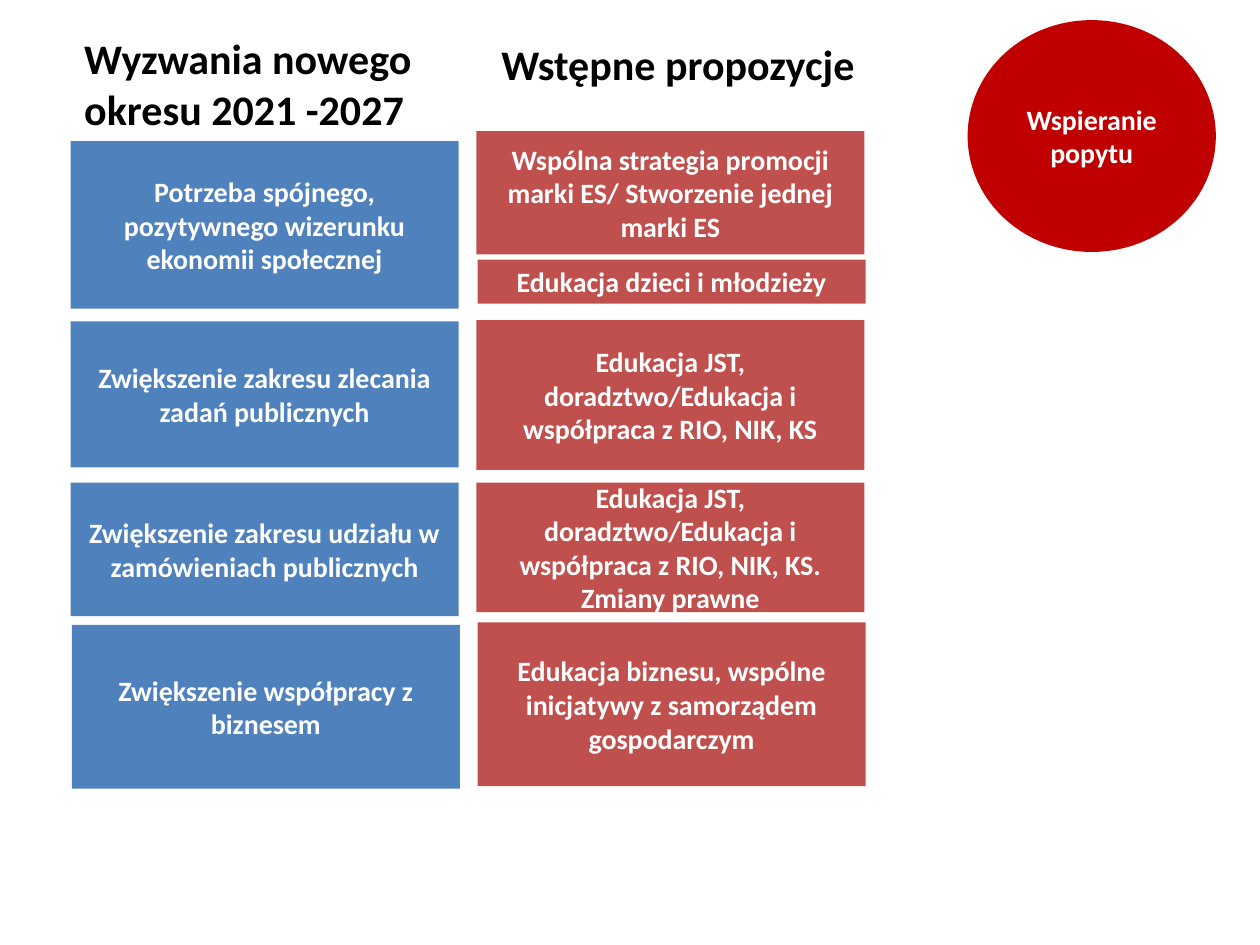
from dataclasses import dataclass

from pptx import Presentation
from pptx.dml.color import RGBColor
from pptx.enum.shapes import MSO_SHAPE as Shape
from pptx.enum.text import MSO_ANCHOR as Anchor, MSO_AUTO_SIZE as AutoSize, PP_ALIGN as Align
from pptx.slide import Slide
from pptx.util import Inches, Pt

BOX_WIDTH = 3.08
CHALLENGES = [
    (0.56, 1.12, 1.33, "Potrzeba spójnego, pozytywnego wizerunku ekonomii społecznej"),
    (0.56, 2.55, 1.16, "Zwiększenie zakresu zlecania zadań publicznych"),
    (0.56, 3.83, 1.06, "Zwiększenie zakresu udziału w zamówieniach publicznych"),
    (0.57, 4.96, 1.3, "Zwiększenie współpracy z biznesem"),
]
PROPOSALS = [
    (3.78, 1.04, 0.98, "Wspólna strategia promocji marki ES/ Stworzenie jednej marki ES"),
    (3.79, 2.06, 0.35, "Edukacja dzieci i młodzieży"),
    (3.78, 2.54, 1.19, "Edukacja JST, doradztwo/Edukacja i współpraca z RIO, NIK, KS"),
    (3.78, 3.83, 1.03, "Edukacja JST, doradztwo/Edukacja i współpraca z RIO, NIK, KS. Zmiany prawne"),
    (3.79, 4.94, 1.3, "Edukacja biznesu, wspólne inicjatywy z samorządem gospodarczym"),
]


def color(value):
    return RGBColor.from_string(value)


@dataclass
class SlideBuilder:
    """Draws styled headings and filled shapes on the current slide."""

    slide: Slide
    font: str = "Calibri"
    heading_size: int = 24
    body_size: int = 16
    heading_color: str = "000000"
    body_color: str = "FFFFFF"

    def set_text(self, shape, text, size, text_color, align):
        shape.text_frame.word_wrap = True
        paragraph = shape.text_frame.paragraphs[0]
        paragraph.text = text
        paragraph.alignment = align
        paragraph.font.name = self.font
        paragraph.font.size = Pt(size)
        paragraph.font.bold = True
        paragraph.font.color.rgb = color(text_color)

    def heading(self, left, top, width, height, text):
        box = self.slide.shapes.add_textbox(*map(Inches, (left, top, width, height)))
        self.set_text(box, text, self.heading_size, self.heading_color, Align.LEFT)
        box.text_frame.auto_size = AutoSize.SHAPE_TO_FIT_TEXT

    def block(self, left, top, width, height, text, fill, kind=Shape.RECTANGLE):
        shape = self.slide.shapes.add_shape(kind, *map(Inches, (left, top, width, height)))
        shape.shadow.inherit = False
        shape.fill.solid()
        shape.fill.fore_color.rgb = color(fill)
        shape.line.fill.background()
        shape.text_frame.vertical_anchor = Anchor.MIDDLE
        self.set_text(shape, text, self.body_size, self.body_color, Align.CENTER)

    def column(self, boxes, fill):
        for left, top, height, text in boxes:
            self.block(left, top, BOX_WIDTH, height, text, fill)


def main():
    presentation = Presentation()
    presentation.slide_width = Inches(10)
    presentation.slide_height = Inches(7.5)
    builder = SlideBuilder(presentation.slides.add_slide(presentation.slide_layouts[6]))

    builder.heading(0.57, 0.21, 3.12, 0.91, "Wyzwania nowego okresu 2021 -2027")
    builder.heading(3.88, 0.26, 4.22, 0.5, "Wstępne propozycje")
    builder.column(CHALLENGES, "4F81BD")
    builder.column(PROPOSALS, "C0504D")
    builder.block(7.68, 0.16, 1.97, 1.84, "Wspieranie popytu", "C00000", Shape.OVAL)

    presentation.save("out.pptx")


if __name__ == "__main__":
    main()
